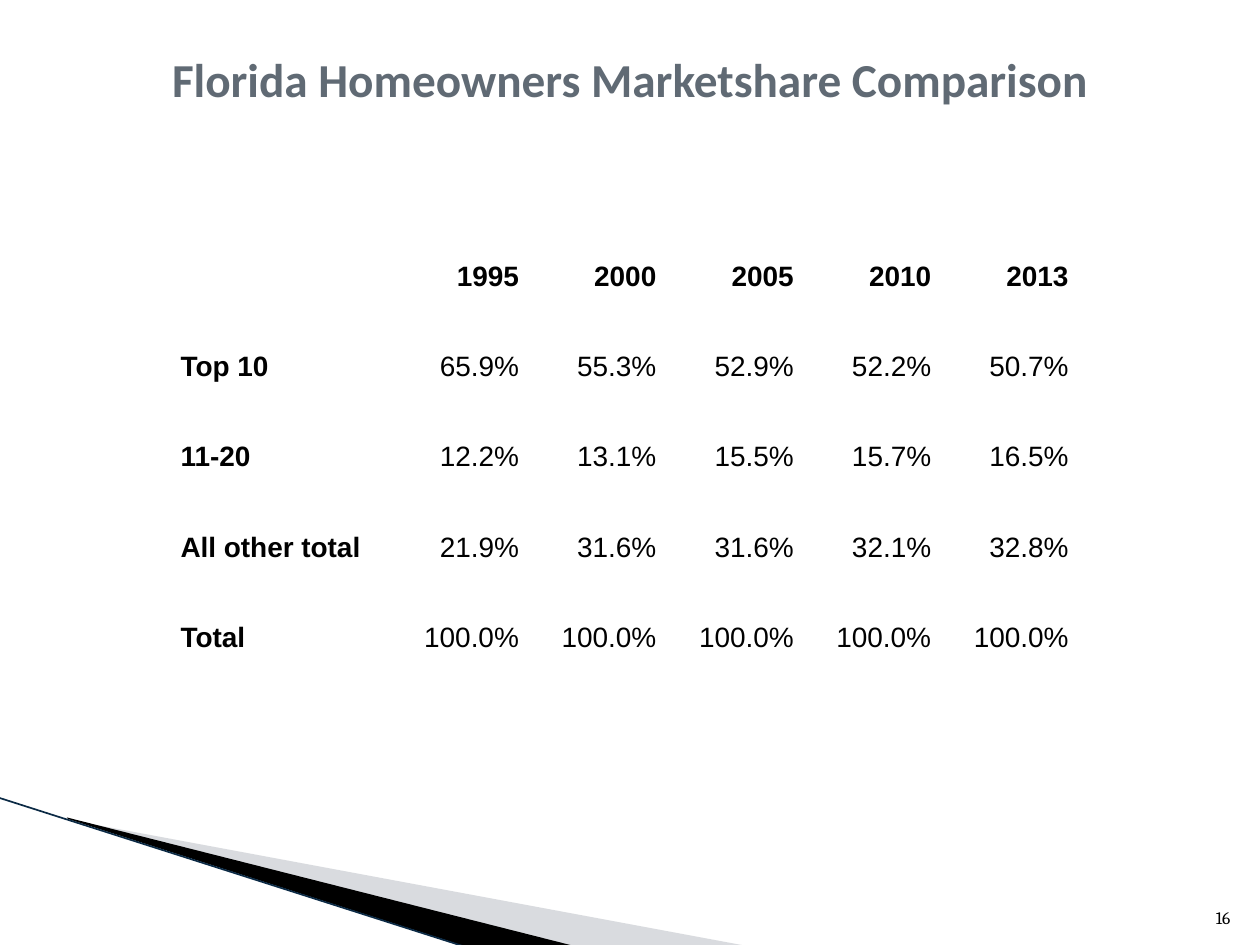
from lxml import etree
from pptx import Presentation
from pptx.dml.color import RGBColor
from pptx.enum.shapes import MSO_CONNECTOR
from pptx.enum.text import MSO_ANCHOR as ANCHOR, PP_ALIGN as ALIGN
from pptx.oxml.ns import qn
from pptx.util import Cm, Pt

ROWS = [
    ["", "1995", "2000", "2005", "2010", "2013"],
    ["Top 10", "65.9%", "55.3%", "52.9%", "52.2%", "50.7%"],
    ["11-20", "12.2%", "13.1%", "15.5%", "15.7%", "16.5%"],
    ["All other total", "21.9%", "31.6%", "31.6%", "32.1%", "32.8%"],
    ["Total", "100.0%", "100.0%", "100.0%", "100.0%", "100.0%"],
]
LABEL_W, YEAR_W, ROW_H = 4.11, 2.77, 1.82


def rgb(color):
    return RGBColor.from_string(color)


def style_text(p, size, font, color, bold, align):
    p.alignment = align
    for r in p.runs:
        r.font.size = Pt(size)
        r.font.name = font
        r.font.bold = bold
        r.font.color.rgb = rgb(color)


def add_text(slide, box, text, size, font, color, bold, align, anchor, inset=None):
    tf = slide.shapes.add_textbox(*map(Cm, box)).text_frame
    tf.word_wrap = True
    tf.vertical_anchor = anchor
    if inset is not None:
        tf.margin_left = tf.margin_right = Cm(inset)
        tf.margin_top = tf.margin_bottom = Cm(inset)
    tf.text = text
    style_text(tf.paragraphs[0], size, font, color, bold, align)


def add_wedge(slide, points, color, alpha=None):
    start, *rest = [(Cm(x), Cm(y)) for x, y in points]
    builder = slide.shapes.build_freeform(*start)
    builder.add_line_segments(rest, close=True)
    s = builder.convert_to_shape()
    s.shadow.inherit = False
    s.fill.solid()
    s.fill.fore_color.rgb = rgb(color)
    s.line.fill.background()
    if alpha is not None:
        clr = s.fill._xPr.find(qn("a:solidFill"))[0]
        etree.SubElement(clr, qn("a:alpha"), val=str(alpha * 1000))


def add_line(slide, start, end, color, width):
    ends = map(Cm, start + end)
    line = slide.shapes.add_connector(MSO_CONNECTOR.STRAIGHT, *ends)
    line.line.color.rgb = rgb(color)
    line.line.width = Pt(width)
    etree.SubElement(line._element.spPr, qn("a:effectLst"))


def add_share_table(slide, left, top):
    n_rows, n_cols = len(ROWS), len(ROWS[0])
    width = LABEL_W + YEAR_W * (n_cols - 1)
    size = map(Cm, (left, top, width, ROW_H * n_rows))
    table = slide.shapes.add_table(n_rows, n_cols, *size).table
    table.first_row = table.horz_banding = False
    for j, col in enumerate(table.columns):
        col.width = Cm(YEAR_W if j else LABEL_W)
    for i, values in enumerate(ROWS):
        table.rows[i].height = Cm(ROW_H)
        for j, value in enumerate(values):
            cell = table.cell(i, j)
            cell.fill.background()
            cell.vertical_anchor = ANCHOR.MIDDLE
            cell.margin_left = cell.margin_right = cell.margin_top = Cm(0.03)
            cell.margin_bottom = 0
            cell.text = value
            # Year headings and row labels are bold
            style_text(cell.text_frame.paragraphs[0], 16, "Arial", "000000",
                       i == 0 or j == 0, ALIGN.RIGHT if j else ALIGN.LEFT)


def main():
    prs = Presentation()
    prs.slide_width, prs.slide_height = Cm(25.4), Cm(19.05)
    slide = prs.slides.add_slide(prs.slide_layouts[6])

    # Corner decoration
    add_wedge(slide, [(1.4, 16.53), (15.11, 19.08), (11.58, 19.08), (1.4, 16.51)],
              "A1A6AF", alpha=40)
    add_wedge(slide, [(1.35, 16.48), (11.61, 19.08), (9.45, 19.1), (1.37, 16.51)],
              "000000")
    add_line(slide, (-0.03, 16.08), (9.42, 19.1), "0B2A45", 0.95)

    # Market shares by year
    add_share_table(slide, 3.61, 4.65)

    # Title and slide number
    add_text(slide, (0, 0, 25.4, 3.18), "Florida Homeowners Marketshare Comparison",
             27, "Calibri", "606A74", True, ALIGN.CENTER, ANCHOR.MIDDLE, inset=0.76)
    add_text(slide, (24.03, 17.81, 1.02, 1.02), "16",
             10, "Cambria", "000000", False, ALIGN.RIGHT, ANCHOR.BOTTOM)

    prs.save("out.pptx")


if __name__ == "__main__":
    main()
